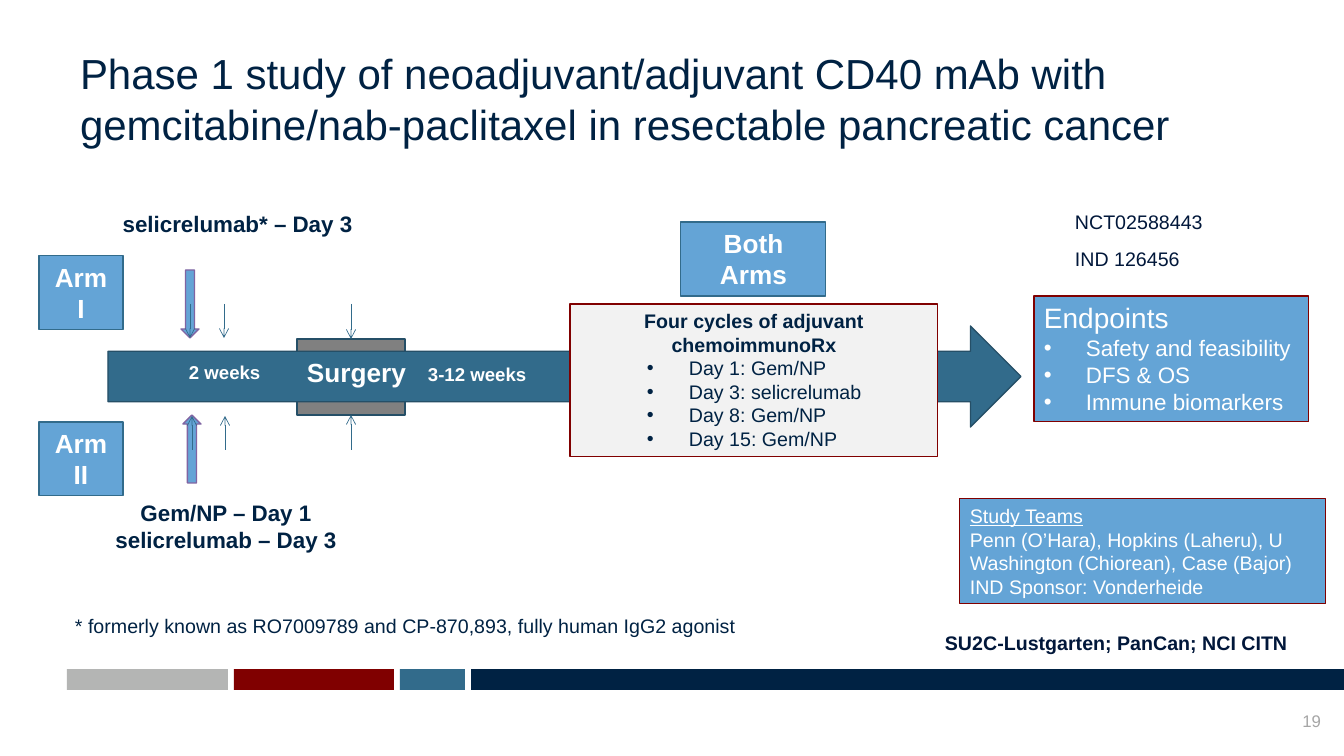
"""Build the slide on the phase 1 trial of selicrelumab in pancreatic cancer."""
from lxml.etree import SubElement
from pptx import Presentation
from pptx.dml.color import RGBColor
from pptx.enum.shapes import MSO_CONNECTOR, MSO_SHAPE
from pptx.enum.text import MSO_ANCHOR, MSO_AUTO_SIZE, PP_ALIGN
from pptx.oxml.ns import qn
from pptx.util import Pt

PX = 9071
NAVY, INK, TEAL, BLUE = "002243", "01173A", "326B8B", "64A4D6"
RED, EDGE, WHITE = "800000", "254F67", "FFFFFF"
LEFT, CENTER, RIGHT = PP_ALIGN.LEFT, PP_ALIGN.CENTER, PP_ALIGN.RIGHT
hex_color = RGBColor.from_string


def add_block(kind, bounds, fill, line=None, width=0.75):
    """Add a filled preset shape, outlined if a line colour is given."""
    shape = slide.shapes.add_shape(kind, *(value * PX for value in bounds))
    shape.shadow.inherit = False
    shape.fill.solid()
    shape.fill.fore_color.rgb = hex_color(fill)
    if line:
        shape.line.color.rgb = hex_color(line)
        shape.line.width = Pt(width)
    else:
        shape.line.fill.background()
    return shape


def write(shape, lines, size, color, align=LEFT, bold=False, indent=0, wrap=True):
    """Write lines of (text, format changes); indent bullets the lines after the first."""
    frame = shape.text_frame
    frame.word_wrap = wrap
    frame.auto_size = MSO_AUTO_SIZE.NONE
    frame.vertical_anchor = MSO_ANCHOR.TOP
    for index, (text, changes) in enumerate(lines):
        paragraph = frame.paragraphs[0] if index == 0 else frame.add_paragraph()
        paragraph.alignment = align
        if indent and index:
            paragraph.alignment = LEFT
            properties = paragraph._p.get_or_add_pPr()
            properties.set("marL", str(indent * PX))
            properties.set("indent", str(-42 * PX))
            SubElement(properties, qn("a:buFont"), typeface="Arial")
            SubElement(properties, qn("a:buChar"), char="•")
        run = paragraph.add_run()
        run.text = text
        run.font.color.rgb = hex_color(color)
        formats = {"name": "Arial", "size": Pt(size), "bold": bold, **changes}
        for name, value in formats.items():
            setattr(run.font, name, value)
    return frame


presentation = Presentation()
presentation.slide_width, presentation.slide_height = 1344 * PX, 756 * PX
slide = presentation.slides.add_slide(presentation.slide_layouts[5])

for left, width, color in [(471, 873, NAVY), (400, 65, TEAL), (234, 160, RED), (67, 161, "B4B5B4")]:
    add_block(MSO_SHAPE.RECTANGLE, (left, 669, width, 21), color)

title = slide.shapes.title
title.left, title.top, title.width, title.height = 80 * PX, 48 * PX, 1184 * PX, 50 * PX
title_text = ("Phase 1 study of neoadjuvant/adjuvant CD40 mAb with "
              "gemcitabine/nab-paclitaxel in resectable pancreatic cancer")
title_frame = write(title, [(title_text, {})], 30, NAVY)

surgery = add_block(MSO_SHAPE.RECTANGLE, (297, 339, 108, 76), "808080", EDGE, 1)
add_block(MSO_SHAPE.RIGHT_ARROW, (108, 326, 913, 101), TEAL, EDGE, 1)
add_block(MSO_SHAPE.DOWN_ARROW, (181, 270, 18, 68), BLUE, "8064A2", 1)
add_block(MSO_SHAPE.UP_ARROW, (183, 415, 18, 68), BLUE, "8064A2", 1)

labels = [
    ("Surgery", (297, 351, 145, 42), 18.7, WHITE, LEFT, True, True),
    ("2 weeks", (179, 356, 98, 33), 13.3, WHITE, LEFT, True, True),
    ("3-12 weeks", (418, 358, 128, 33), 13.3, WHITE, LEFT, True, True),
    ("selicrelumab* – Day 3", (106, 205, 263, 37), 16, NAVY, CENTER, True, True),
    ("Gem/NP – Day 1 selicrelumab – Day 3", (100, 494, 252, 65), 16, NAVY, CENTER, True, True),
    ("NCT02588443", (1065, 205, 185, 40), 14, INK, LEFT, False, False),
    ("IND 126456", (1065, 242, 156, 40), 14, INK, LEFT, False, False),
    ("* formerly known as RO7009789 and CP-870,893, fully human IgG2 agonist",
     (19, 609, 773, 34), 14, NAVY, CENTER, False, True),
    ("SU2C-Lustgarten; PanCan; NCI CITN", (935, 626, 447, 34), 14, INK, LEFT, True, True),
]
for text, bounds, size, color, align, bold, wrap in labels:
    label = slide.shapes.add_textbox(*(value * PX for value in bounds))
    write(label, [(text, {})], size, color, align, bold, wrap=wrap)

page_number = slide.shapes.add_textbox(1287 * PX, 711 * PX, 34 * PX, 20 * PX)
number_frame = write(page_number, [("19", {})], 12, "A6A6A6", RIGHT)
number_frame.vertical_anchor = MSO_ANCHOR.BOTTOM
for frame in (title_frame, number_frame):
    for side in ("left", "top", "right", "bottom"):
        setattr(frame, f"margin_{side}", 0)

arms = [
    (("Arm", "I"), (39, 256, 84, 74)),
    (("Arm II",), (39, 422, 84, 74)),
    (("Both Arms",), (681, 222, 145, 74)),
]
for names, bounds in arms:
    arm = add_block(MSO_SHAPE.RECTANGLE, bounds, BLUE, TEAL)
    write(arm, [(name, {}) for name in names], 18.7, WHITE, CENTER, True)

doses = [(351, 304, 339, 0), (190, 304, 338, None), (224, 304, 338, None),
         (351, 450, 415, 2), (192, 450, 416, None), (225, 450, 416, None)]
for x, start, end, surgery_side in doses:
    dose = slide.shapes.add_connector(MSO_CONNECTOR.STRAIGHT, x * PX, start * PX, x * PX, end * PX)
    if surgery_side is not None:
        dose.end_connect(surgery, surgery_side)
    dose.line.color.rgb = hex_color(TEAL)
    dose.line.width = Pt(0.5)
    SubElement(dose.line._get_or_add_ln(), qn("a:tailEnd"), type="arrow")
    SubElement(dose._element.spPr, qn("a:effectLst"))

endpoints = add_block(MSO_SHAPE.RECTANGLE, (1034, 296, 275, 126), BLUE, RED)
endpoint_lines = [("Endpoints", {"size": Pt(20)}), ("Safety and feasibility", {}),
                  ("DFS & OS", {}), ("Immune biomarkers", {})]
write(endpoints, endpoint_lines, 16, WHITE, indent=42)

cycles = add_block(MSO_SHAPE.RECTANGLE, (570, 304, 368, 153), "F2F2F2", RED)
cycle_lines = [("Four cycles of adjuvant chemoimmunoRx", {"bold": True}), ("Day 1: Gem/NP", {}),
               ("Day 3: selicrelumab", {}), ("Day 8: Gem/NP", {}), ("Day 15: Gem/NP", {})]
write(cycles, cycle_lines, 14, NAVY, CENTER, indent=109)

teams = add_block(MSO_SHAPE.RECTANGLE, (960, 499, 366, 105), BLUE, RED)
team_lines = [("Study Teams", {"underline": True}),
              ("Penn (O’Hara), Hopkins (Laheru), U Washington (Chiorean), Case (Bajor)", {}),
              ("IND Sponsor: Vonderheide", {})]
write(teams, team_lines, 14, WHITE)

presentation.save("out.pptx")
